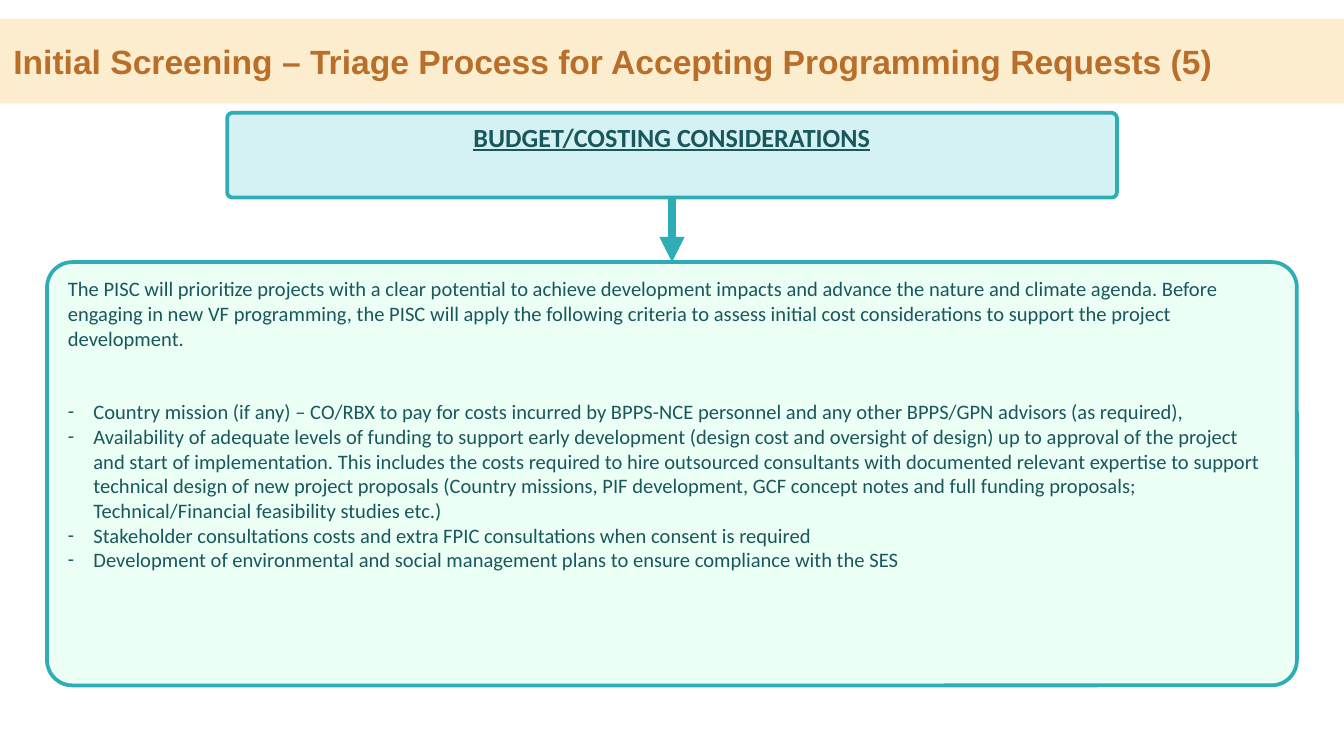
from dataclasses import dataclass

from lxml import etree
from pptx import Presentation
from pptx import util as u
from pptx.dml import color
from pptx.enum import shapes, text
from pptx.oxml import ns


@dataclass(frozen=True)
class Theme:
    band: str = "FCEDCF"
    title: str = "B96E29"
    ink: str = "19575C"
    edge: str = "2EADB7"
    head: str = "D4F1F3"
    panel: str = "EBFFF5"
    big: int = 18
    mid: int = 14
    small: int = 11


THEME = Theme()
TITLE = "Initial Screening – Triage Process for Accepting Programming Requests (5)"
HEAD = "BUDGET/COSTING CONSIDERATIONS"
INTRO = (
    "The PISC will prioritize projects with a clear potential to achieve development impacts "
    "and advance the nature and climate agenda. Before engaging in new VF programming, the PISC "
    "will apply the following criteria to assess initial cost considerations to support the "
    "project development."
)
COSTS = [
    "Country mission (if any) – CO/RBX to pay for costs incurred by BPPS-NCE personnel and any "
    "other BPPS/GPN advisors (as required),",
    "Availability of adequate levels of funding to support early development (design cost and "
    "oversight of design) up to approval of the project and start of implementation. This "
    "includes the costs required to hire outsourced consultants with documented relevant "
    "expertise to support technical design of new project proposals (Country missions, PIF "
    "development, GCF concept notes and full funding proposals; Technical/Financial "
    "feasibility studies etc.)",
    "Stakeholder consultations costs and extra FPIC consultations when consent is required",
    "Development of environmental and social management plans to ensure compliance with the SES",
]


def rgb(code):
    return color.RGBColor.from_string(code)


def add_tag(parent, tag, **attrs):
    return etree.SubElement(parent, ns.qn(tag), **attrs)


def place(shape, left, top, width, height):
    shape.left, shape.top = u.Inches(left), u.Inches(top)
    shape.width, shape.height = u.Inches(width), u.Inches(height)


def paint(shape, fill, edge=None):
    shape.fill.solid()
    shape.fill.fore_color.rgb = rgb(fill)
    if edge:
        shape.line.color.rgb = rgb(edge)
        shape.line.width = u.Pt(2)


def set_frame(shape, anchor):
    frame = shape.text_frame
    frame.word_wrap = True
    frame.auto_size = text.MSO_AUTO_SIZE.NONE
    frame.vertical_anchor = anchor
    return frame


def write(para, words, size, ink=THEME.ink, face="Calibri", bold=False, line=False,
          align=text.PP_ALIGN.LEFT, before=0):
    para.alignment = align
    para.space_before = u.Pt(before)
    run = para.add_run()
    run.text = words
    font = run.font
    font.name, font.size, font.bold, font.underline = face, u.Pt(size), bold, line
    font.color.rgb = rgb(ink)


def set_bullet(para, mark=None):
    props = para._p.get_or_add_pPr()
    indent = u.Inches(0.19) if mark else 0
    props.set("marL", str(indent))
    props.set("indent", str(-indent))
    if mark:
        add_tag(props, "a:buFont", typeface="Calibri")
        add_tag(props, "a:buChar", char=mark)
    else:
        add_tag(props, "a:buNone")


def add_title(slide):
    title = slide.shapes.title
    place(title, 0, 0.14, 10, 0.63)
    paint(title, THEME.band)
    frame = set_frame(title, text.MSO_ANCHOR.MIDDLE)
    write(frame.paragraphs[0], TITLE, THEME.big, ink=THEME.title, face="Arial", bold=True)


def add_panel(slide):
    panel = slide.placeholders[1]
    place(panel, 0.35, 1.95, 9.3, 3.15)
    geom = add_tag(panel._element.spPr, "a:prstGeom", prst="roundRect")
    add_tag(add_tag(geom, "a:avLst"), "a:gd", name="adj", fmla="val 6000")
    paint(panel, THEME.panel, THEME.edge)
    frame = set_frame(panel, text.MSO_ANCHOR.TOP)
    frame.margin_right = u.Inches(0.14)
    intro = frame.paragraphs[0]
    write(intro, INTRO, THEME.small)
    set_bullet(intro)
    gap = 2 * 1.2 * THEME.small
    for i, cost in enumerate(COSTS):
        para = frame.add_paragraph()
        write(para, cost, THEME.small, before=0 if i else gap)
        set_bullet(para, "-")
    return panel


def add_head(slide):
    head = slide.shapes.add_shape(shapes.MSO_SHAPE.ROUNDED_RECTANGLE, 0, 0, 0, 0)
    place(head, 1.69, 0.84, 6.62, 0.63)
    head.adjustments[0] = 0.06
    head.shadow.inherit = False
    paint(head, THEME.head, THEME.edge)
    frame = set_frame(head, text.MSO_ANCHOR.TOP)
    write(frame.paragraphs[0], HEAD, THEME.mid, bold=True, line=True,
          align=text.PP_ALIGN.CENTER)
    return head


def add_arrow(slide, start, end):
    arrow = slide.shapes.add_connector(shapes.MSO_CONNECTOR.STRAIGHT, 0, 0, 0, 0)
    arrow.begin_connect(start, 2)
    arrow.end_connect(end, 0)
    arrow.line.color.rgb = rgb(THEME.edge)
    arrow.line.width = u.Pt(4.5)
    add_tag(arrow.line._get_or_add_ln(), "a:tailEnd", type="triangle")
    add_tag(arrow._element.spPr, "a:effectLst")


def main():
    deck = Presentation()
    deck.slide_width = u.Inches(10)
    deck.slide_height = deck.slide_width * 9 // 16
    slide = deck.slides.add_slide(deck.slide_layouts[1])
    add_title(slide)
    panel = add_panel(slide)
    head = add_head(slide)
    add_arrow(slide, head, panel)
    deck.save("out.pptx")


if __name__ == "__main__":
    main()
